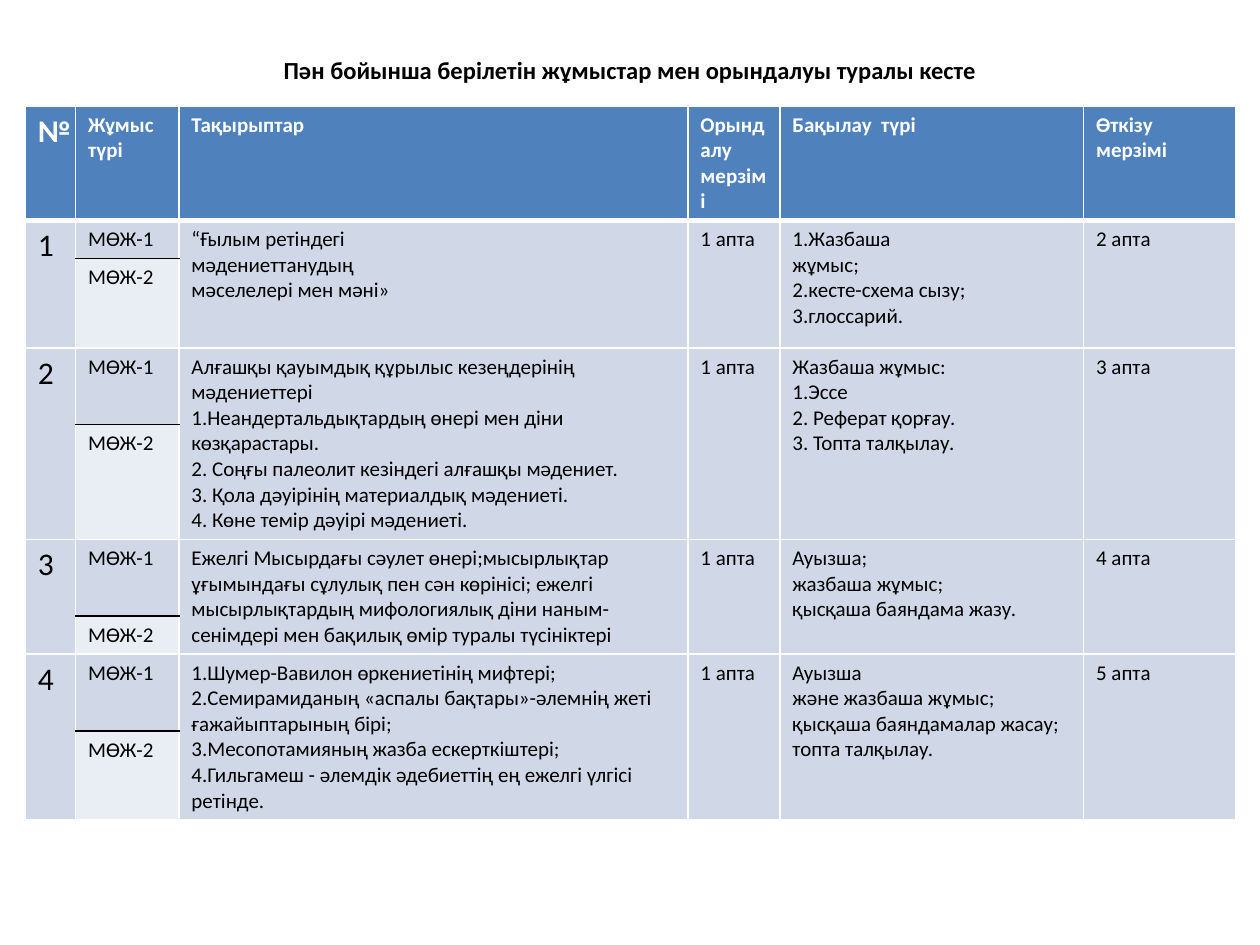
from lxml import etree
from pptx import Presentation
from pptx.dml.color import RGBColor
from pptx.enum.text import MSO_ANCHOR, PP_ALIGN
from pptx.oxml.ns import qn
from pptx.util import Inches, Pt

MIDDLE = MSO_ANCHOR.MIDDLE
CENTER = PP_ALIGN.CENTER

FONT = "Calibri"
BLACK, WHITE = "000000", "FFFFFF"
BLUE, BAND, PALE = "4F81BD", "D0D8E8", "E9EDF4"

TITLE = "Пән бойынша берілетін жұмыстар мен орындалуы туралы кесте"
HEADS = ["№", "Жұмыс түрі", "Тақырыптар", "Орындалу\nмерзімі",
         "Бақылау  түрі", "Өткізу\nмерзімі"]
TASKS = ["МӨЖ-1", "МӨЖ-2"]
# topics, time to do, kind of check, time to hand in
WORKS = [
    ("“Ғылым ретіндегі\nмәдениеттанудың\nмәселелері мен мәні»",
     "1 апта",
     "1.Жазбаша\nжұмыс;\n2.кесте-схема сызу;\n3.глоссарий.",
     "2 апта"),
    ("Алғашқы қауымдық құрылыс кезеңдерінің мәдениеттері\n"
     "1.Неандертальдықтардың өнері мен діни көзқарастары.\n"
     "2. Соңғы палеолит кезіндегі алғашқы мәдениет.\n"
     "3. Қола дәуірінің материалдық мәдениеті.\n"
     "4. Көне темір дәуірі мәдениеті.",
     "1 апта",
     "Жазбаша жұмыс:\n1.Эссе\n2. Реферат қорғау.\n3. Топта талқылау.",
     "3 апта"),
    ("Ежелгі Мысырдағы сәулет өнері;мысырлықтар ұғымындағы сұлулық пен "
     "сән көрінісі; ежелгі мысырлықтардың мифологиялық діни "
     "наным-сенімдері мен бақилық өмір туралы түсініктері",
     "1 апта",
     "Ауызша;\nжазбаша жұмыс;\nқысқаша баяндама жазу.",
     "4 апта"),
    ("1.Шумер-Вавилон өркениетінің мифтері;\n"
     "2.Семирамиданың «аспалы бақтары»-әлемнің жеті ғажайыптарының бірі;\n"
     "3.Месопотамияның жазба ескерткіштері;\n"
     "4.Гильгамеш - әлемдік әдебиеттің ең ежелгі үлгісі ретінде.",
     "1 апта",
     "Ауызша\nжәне жазбаша жұмыс;\nқысқаша баяндамалар жасау;\n"
     "топта талқылау.",
     "5 апта"),
]
WIDTHS = [0.4, 0.82, 4.04, 0.73, 2.41, 1.21]
HEIGHTS = [0.91, 0.3, 0.71, 0.61, 0.91, 0.61, 0.3, 0.61, 0.71]


def color(code):
    return RGBColor.from_string(code)


def write(frame, text, size, ink, bold=False):
    frame.text = text
    for para in frame.paragraphs:
        for run in para.runs:
            font = run.font
            font.name, font.size, font.bold = FONT, Pt(size), bold
            font.color.rgb = color(ink)


def edge(cell, sides):
    """Set cell borders; sides maps L, R, T, B to (colour, points)."""
    props = cell._tc.get_or_add_tcPr()
    for spot, side in enumerate("LRTB"):
        ink, wide = sides.get(side, (WHITE, 1))
        line = etree.Element(qn("a:ln" + side), w=str(Pt(wide)))
        fill = etree.SubElement(line, qn("a:solidFill"))
        etree.SubElement(fill, qn("a:srgbClr"), val=ink)
        props.insert(spot, line)


def paint(cell, fill, sides):
    cell.fill.solid()
    cell.fill.fore_color.rgb = color(fill)
    edge(cell, sides)


def add_title(slide):
    box = slide.shapes.add_textbox(Inches(0.5), Inches(0.3),
                                   Inches(9), Inches(0.69))
    frame = box.text_frame
    frame.word_wrap = True
    frame.vertical_anchor = MIDDLE
    frame.margin_bottom = Inches(0.23)
    write(frame, TITLE, 14, BLACK, True)
    frame.paragraphs[0].alignment = CENTER


def add_plan(slide):
    table = slide.shapes.add_table(
        len(HEIGHTS), len(WIDTHS), Inches(0.2), Inches(0.84),
        Inches(sum(WIDTHS)), Inches(sum(HEIGHTS))).table
    table.horz_banding = False
    for col, wide in zip(table.columns, WIDTHS):
        col.width = Inches(wide)
    for row, high in zip(table.rows, HEIGHTS):
        row.height = Inches(high)

    for col, text in enumerate(HEADS):
        cell = table.cell(0, col)
        write(cell.text_frame, text, 12 if col else 18, WHITE, True)
        paint(cell, BLUE, {"B": (WHITE, 3)})

    for num, work in enumerate(WORKS, 1):
        top = 2 * num - 1
        texts = [str(num), None, *work]
        for col, text in enumerate(texts):
            pair = [table.cell(top, col), table.cell(top + 1, col)]
            if text is None:
                for cell, task in zip(pair, TASKS):
                    write(cell.text_frame, task, 12, BLACK)
                paint(pair[0], BAND, {"B": (BLACK, 1)})
                paint(pair[1], PALE, {"T": (BLACK, 1)})
                continue
            pair[0].merge(pair[1])
            write(pair[0].text_frame, text, 12 if col else 18, BLACK)
            for cell in pair:
                paint(cell, BAND, {})
        if num == 1:
            for col in range(len(WIDTHS)):
                line = table.cell(top, col)._tc.tcPr.find(qn("a:lnT"))
                line.set("w", str(Pt(3)))


def main():
    deck = Presentation()
    deck.slide_width, deck.slide_height = Inches(10), Inches(7.5)
    slide = deck.slides.add_slide(deck.slide_layouts[6])
    add_title(slide)
    add_plan(slide)
    deck.save("out.pptx")


if __name__ == "__main__":
    main()
